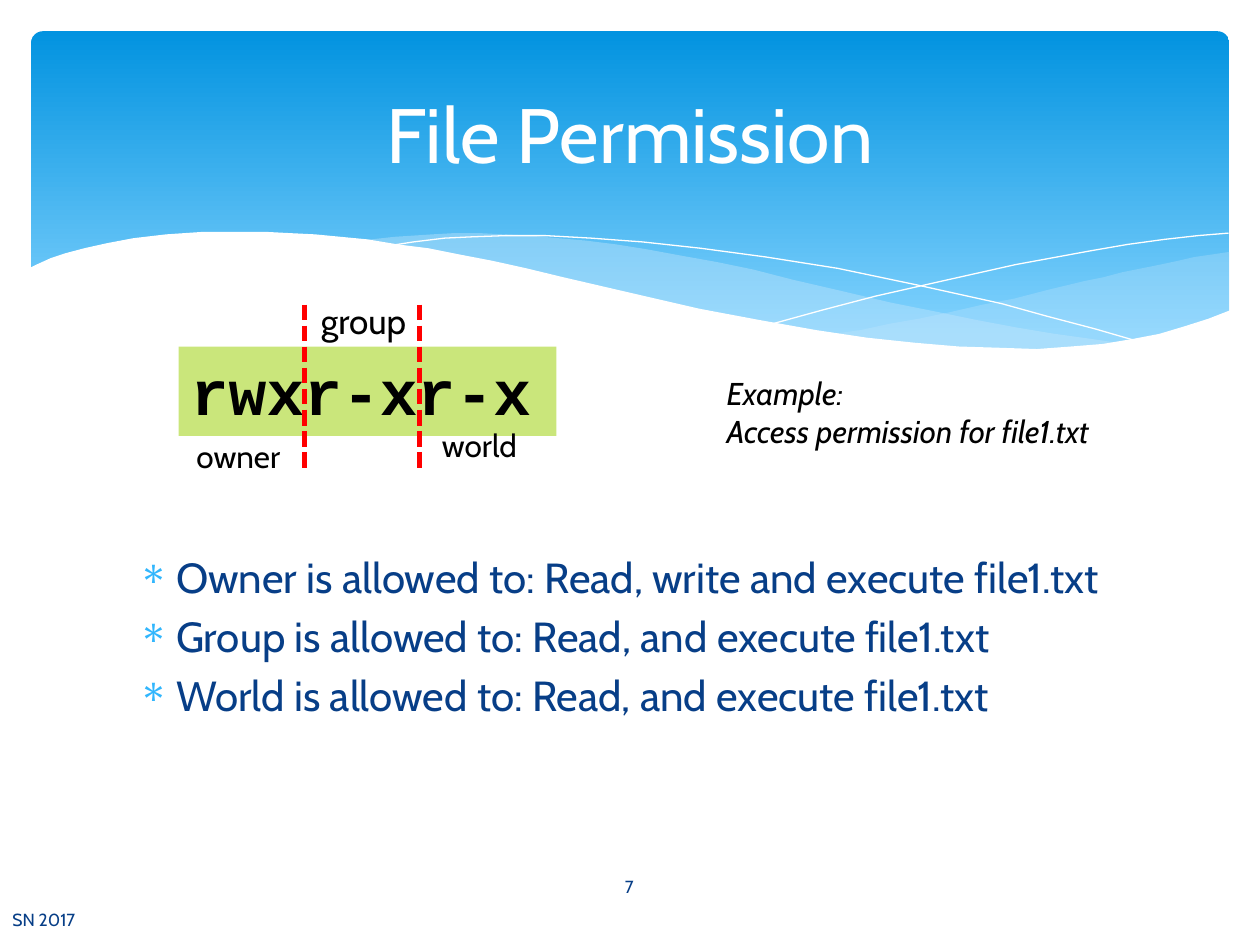
from dataclasses import dataclass

from lxml.etree import SubElement
from pptx import Presentation
from pptx.dml.color import RGBColor
from pptx.enum.dml import MSO_LINE
from pptx.enum.shapes import MSO_CONNECTOR, MSO_SHAPE
from pptx.enum.text import MSO_ANCHOR, PP_ALIGN
from pptx.oxml.ns import qn
from pptx.util import Cm, Pt


@dataclass(frozen=True)
class Theme:
    font: str = "Cabin"
    code_font: str = "Courier New"
    white: str = "FFFFFF"
    black: str = "000000"
    navy: str = "073E87"
    bullet: str = "31B6FD"
    sky_top: str = "0293E0"
    sky_bottom: str = "83D3FE"
    veil: str = "C6E7FC"
    lime: str = "CAE67B"
    red: str = "FF0000"
    title_size: int = 44
    code_size: int = 36
    body_size: int = 24
    group_size: int = 20
    label_size: int = 18
    footer_size: int = 10


WAVE_UNIT = Cm(2.54) / 100

RIGHT_VEIL = [
    (975, 200), (962, 202), (948, 204), (935, 207), (921, 210), (906, 213),
    (891, 216), (876, 220), (861, 223), (832, 230), (805, 237), (779, 242),
    (753, 248), (729, 253), (706, 257), (683, 262), (661, 265), (691, 269),
    (719, 272), (745, 275), (769, 277), (792, 277), (814, 278), (844, 277),
    (863, 275), (881, 273), (897, 270), (913, 267), (928, 263), (942, 259),
    (963, 252), (976, 247), (976, 200),
]
LEFT_VEIL = [
    (893, 273), (866, 269), (837, 265), (807, 260), (775, 254), (741, 247),
    (706, 240), (668, 231), (629, 222), (598, 214), (569, 208), (541, 203),
    (514, 198), (489, 194), (465, 191), (442, 189), (420, 187), (399, 186),
    (380, 185), (361, 185), (344, 186), (313, 188), (286, 191), (323, 196),
    (362, 203), (404, 211), (449, 222), (491, 232), (530, 240), (566, 248),
    (601, 255), (634, 261), (665, 266), (695, 270), (722, 274), (748, 276),
    (773, 277), (796, 278), (828, 278), (857, 277), (876, 275),
]
FALLING_LINE = [
    (309, 195), (328, 192), (353, 189), (374, 188), (401, 187), (433, 187),
    (469, 189), (510, 192), (556, 197), (608, 204), (665, 213), (727, 226),
    (795, 241), (831, 251), (869, 261), (907, 272),
]
RISING_LINE = [
    (613, 257), (653, 246), (695, 235), (748, 223), (806, 210), (866, 199),
    (895, 194), (924, 190), (951, 187), (975, 185),
]
WHITE_WAVE = [
    (977, 246), (959, 253), (940, 259), (920, 265), (899, 269), (875, 273),
    (850, 275), (823, 277), (793, 276), (761, 275), (726, 272), (688, 268),
    (648, 262), (603, 254), (555, 245), (503, 233), (447, 220), (418, 213),
    (391, 207), (365, 202), (340, 197), (316, 194), (292, 190), (271, 188),
    (250, 186), (230, 185), (211, 184), (161, 184), (132, 186), (106, 189),
    (85, 193), (67, 197), (52, 201), (40, 205), (29, 210), (23, 213),
    (23, 329), (977, 329),
]


class SlideBuilder:
    def __init__(self, page, theme):
        self.page = page
        self.theme = theme

    def fill(self, shape, color, opacity=100):
        shape.fill.solid()
        shape.fill.fore_color.rgb = RGBColor.from_string(color)
        if opacity < 100:
            tint = next(shape._element.spPr.iter(qn("a:srgbClr")))
            SubElement(tint, qn("a:alpha"), val=str(opacity * 1000))

    def rectangle(self, kind, left, top, width, height):
        shape = self.page.shapes.add_shape(
            kind, Cm(left), Cm(top), Cm(width), Cm(height))
        shape.shadow.inherit = False
        shape.line.fill.background()
        return shape

    def sky(self, left, top, width, height):
        panel = self.rectangle(MSO_SHAPE.ROUNDED_RECTANGLE, left, top, width, height)
        panel.adjustments[0] = 0.034
        panel.fill.gradient()
        panel.fill.gradient_angle = 270
        colors = (self.theme.sky_top, self.theme.sky_bottom)
        for stop, color, position in zip(panel.fill.gradient_stops, colors, (0, 0.9)):
            stop.color.rgb = RGBColor.from_string(color)
            stop.position = position

    def outline(self, points, closed):
        builder = self.page.shapes.build_freeform(*points[0], scale=WAVE_UNIT)
        builder.add_line_segments(points[1:], close=closed)
        shape = builder.convert_to_shape()
        shape.shadow.inherit = False
        return shape

    def wave(self, points, color, opacity=100):
        shape = self.outline(points, closed=True)
        self.fill(shape, color, opacity)
        shape.line.fill.background()

    def curve(self, points):
        shape = self.outline(points, closed=False)
        shape.fill.background()
        shape.line.color.rgb = RGBColor.from_string(self.theme.white)
        shape.line.width = Pt(0)

    def divider(self, x, top, bottom):
        line = self.page.shapes.add_connector(
            MSO_CONNECTOR.STRAIGHT, Cm(x), Cm(top), Cm(x), Cm(bottom))
        line.line.color.rgb = RGBColor.from_string(self.theme.red)
        line.line.width = Pt(3)
        line.line.dash_style = MSO_LINE.SQUARE_DOT
        SubElement(line._element.spPr, qn("a:effectLst"))

    def set_text(self, box, text, size, color, font=None, align=PP_ALIGN.LEFT,
                 anchor=MSO_ANCHOR.TOP, bold=False, italic=False):
        frame = box.text_frame
        frame.word_wrap = True
        frame.vertical_anchor = anchor
        frame.text = text
        for para in frame.paragraphs:
            para.alignment = align
            for span in para.runs:
                span.font.name = font or self.theme.font
                span.font.size = Pt(size)
                span.font.color.rgb = RGBColor.from_string(color)
                span.font.bold = bold
                span.font.italic = italic

    def text(self, left, top, width, height, text, size, color, **style):
        box = self.page.shapes.add_textbox(Cm(left), Cm(top), Cm(width), Cm(height))
        self.set_text(box, text, size, color, **style)
        return box

    def bullets(self, left, top, width, height, items):
        theme = self.theme
        box = self.text(left, top, width, height, "\n".join(items),
                        theme.body_size, theme.navy)
        for para in box.text_frame.paragraphs:
            para.space_before = Pt(theme.body_size * 0.2)
            properties = para._p.get_or_add_pPr()
            properties.set("marL", str(Cm(0.76)))
            properties.set("indent", str(Cm(-0.76)))
            tint = SubElement(properties, qn("a:buClr"))
            SubElement(tint, qn("a:srgbClr"), val=theme.bullet)
            SubElement(properties, qn("a:buChar"), char="∗")

    def code(self, left, top, width, height, text):
        theme = self.theme
        panel = self.rectangle(MSO_SHAPE.RECTANGLE, left, top, width, height)
        self.fill(panel, theme.lime)
        self.set_text(panel, text, theme.code_size, theme.black,
                      font=theme.code_font, bold=True)


def main():
    deck = Presentation()
    deck.slide_width, deck.slide_height = Cm(25.4), Cm(19.05)
    theme = Theme()
    slide = SlideBuilder(deck.slides.add_slide(deck.slide_layouts[6]), theme)
    centered = {"align": PP_ALIGN.CENTER}
    middle = {"anchor": MSO_ANCHOR.MIDDLE}

    slide.sky(0.63, 0.63, 24.15, 6.86)
    slide.wave(RIGHT_VEIL, theme.veil, 29)
    slide.wave(LEFT_VEIL, theme.veil, 40)
    slide.curve(FALLING_LINE)
    slide.curve(RISING_LINE)
    slide.wave(WHITE_WAVE, theme.white)

    slide.bullets(2.54, 11, 20.32, 4.9, [
        "Owner is allowed to: Read, write and execute file1.txt",
        "Group is allowed to: Read, and execute file1.txt",
        "World is allowed to: Read, and execute file1.txt",
    ])
    slide.text(11.07, 17.37, 3.23, 1.02, "7", theme.footer_size, theme.navy,
               **centered, **middle)
    slide.text(1.27, 0.94, 22.86, 3.48, "File Permission", theme.title_size,
               theme.white, **centered, **middle)

    slide.code(3.6, 6.99, 7.62, 1.8, "rwxr-xr-x")
    for x in (8.46, 6.14):
        slide.divider(x, 6.14, 9.5)
    for label, left, top, width, size in (
        ("owner", 3.6, 8.69, 2.41, theme.label_size),
        ("group", 5.92, 5.92, 2.82, theme.group_size),
        ("world", 8.46, 8.46, 2.41, theme.label_size),
    ):
        slide.text(left, top, width, 1.02, label, size, theme.black, **centered)

    slide.text(14.4, 7.42, 8.64, 1.8, "Example:\nAccess permission for file1.txt",
               theme.label_size, theme.black, italic=True)
    slide.text(0, 18.03, 14, 1.02, "SN 2017", theme.footer_size, theme.navy, **middle)

    deck.save("out.pptx")


if __name__ == "__main__":
    main()
